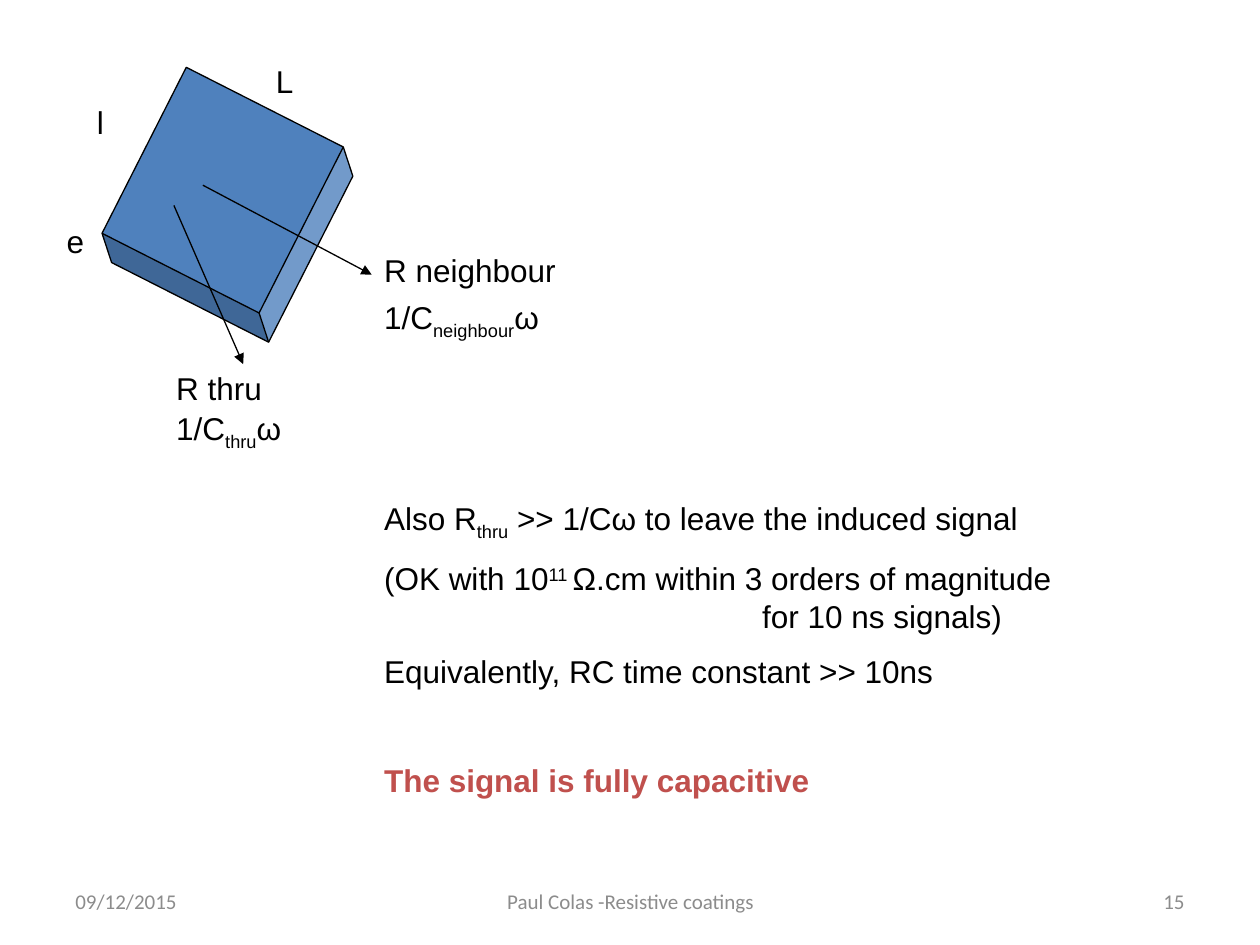
from lxml.etree import SubElement
from pptx import Presentation
from pptx.dml.color import RGBColor
from pptx.enum.shapes import MSO_CONNECTOR, MSO_SHAPE
from pptx.enum.text import MSO_ANCHOR, MSO_AUTO_SIZE, PP_ALIGN
from pptx.oxml.ns import qn
from pptx.util import Inches, Pt

HUES = {"ink": "000000", "gray": "8C8C8C", "cube": "4F81BD", "red": "C0504D"}
SUB, SUP = -25000, 30000

FOOT = [
    ("09/12/2015", 0.5, 2.33, PP_ALIGN.LEFT),
    ("Paul Colas -Resistive coatings", 3.42, 3.17, PP_ALIGN.CENTER),
    ("15", 7.17, 2.33, PP_ALIGN.RIGHT),
]
LABELS = [
    ([("R neighbour", 0)], 2.95, 1.94, 2.76, True),
    ([("R thru", 0)], 1.3, 2.88, 2.76, True),
    ([("e", 0)], 0.43, 1.71, 0.55, True),
    ([("l", 0)], 0.67, 0.77, 0.55, True),
    ([("L", 0)], 2.09, 0.44, 0.55, True),
    ([("1/C", 0), ("thru", SUB), ("ω", 0)], 1.3, 3.2, 1.05, False),
    ([("1/C", 0), ("neighbour", SUB), ("ω", 0)], 2.95, 2.32, 1.5, False),
]
NOTES = [
    {"runs": [("Also R", 0), ("thru", SUB),
              (" >> 1/Cω to leave the induced signal", 0)]},
    {"runs": [("(OK with 10", 0), ("11 ", SUP),
              ("Ω.cm within 3 orders of magnitude for 10 ns signals)", 0)],
     "hang": 3},
    {"runs": [("Equivalently, RC time constant >> 10ns", 0)]},
    {"runs": [("The signal is fully capacitive", 0)],
     "gap": 40.5, "hue": "red", "bold": True},
]
ARROWS = [(1.61, 1.47, 2.95, 2.18), (1.38, 1.63, 1.93, 2.89)]


def color(key):
    return RGBColor.from_string(HUES[key])


def add_box(slide, left, top, width, height, wrap=True):
    box = slide.shapes.add_textbox(*map(Inches, (left, top, width, height)))
    frame = box.text_frame
    frame.word_wrap = wrap
    return frame


def add_runs(para, runs, size=18, face="Arial", hue="ink", bold=False):
    for text, shift in runs:
        run = para.add_run()
        run.text = text
        font = run.font
        font.size, font.name, font.bold = Pt(size), face, bold
        font.color.rgb = color(hue)
        if shift:
            run._r.get_or_add_rPr().set("baseline", str(shift))


def add_cube(slide):
    cube = slide.shapes.add_shape(
        MSO_SHAPE.CUBE, *map(Inches, (0.98, 0.84, 1.65, 1.57)))
    cube.adjustments[0] = 0.11
    cube.rotation = 116.9
    cube.shadow.inherit = False
    cube.fill.solid()
    cube.fill.fore_color.rgb = color("cube")
    cube.line.color.rgb = color("ink")
    cube.line.width = Pt(0.75)


def add_arrow(slide, ends):
    arrow = slide.shapes.add_connector(
        MSO_CONNECTOR.STRAIGHT, *map(Inches, ends))
    arrow.line.color.rgb = color("ink")
    arrow.line.width = Pt(0.75)
    SubElement(arrow.line._get_or_add_ln(), qn("a:tailEnd"), type="triangle")
    SubElement(arrow._element.spPr, qn("a:effectLst"))


def add_notes(slide):
    frame = add_box(slide, 2.95, 3.91, 5.59, 2.96)
    for i, note in enumerate(NOTES):
        para = frame.add_paragraph() if i else frame.paragraphs[0]
        para.space_before = Pt(note.get("gap", 10))
        if "hang" in note:
            hang = Inches(note["hang"])
            props = para._p.get_or_add_pPr()
            props.set("marL", str(hang))
            props.set("indent", str(-hang))
        add_runs(para, note["runs"], hue=note.get("hue", "ink"),
                 bold=note.get("bold", False))


def main():
    deck = Presentation()
    deck.slide_width, deck.slide_height = Inches(10), Inches(7.5)
    slide = deck.slides.add_slide(deck.slide_layouts[6])
    for text, left, width, align in FOOT:
        frame = add_box(slide, left, 6.95, width, 0.4)
        frame.vertical_anchor = MSO_ANCHOR.MIDDLE
        frame.paragraphs[0].alignment = align
        add_runs(frame.paragraphs[0], [(text, 0)], 12, "Calibri", "gray")
    add_cube(slide)
    for ends in ARROWS:
        add_arrow(slide, ends)
    for runs, left, top, width, wrap in LABELS:
        frame = add_box(slide, left, top, width, 0.4, wrap)
        frame.auto_size = MSO_AUTO_SIZE.SHAPE_TO_FIT_TEXT
        add_runs(frame.paragraphs[0], runs)
    add_notes(slide)
    deck.save("out.pptx")


if __name__ == "__main__":
    main()
